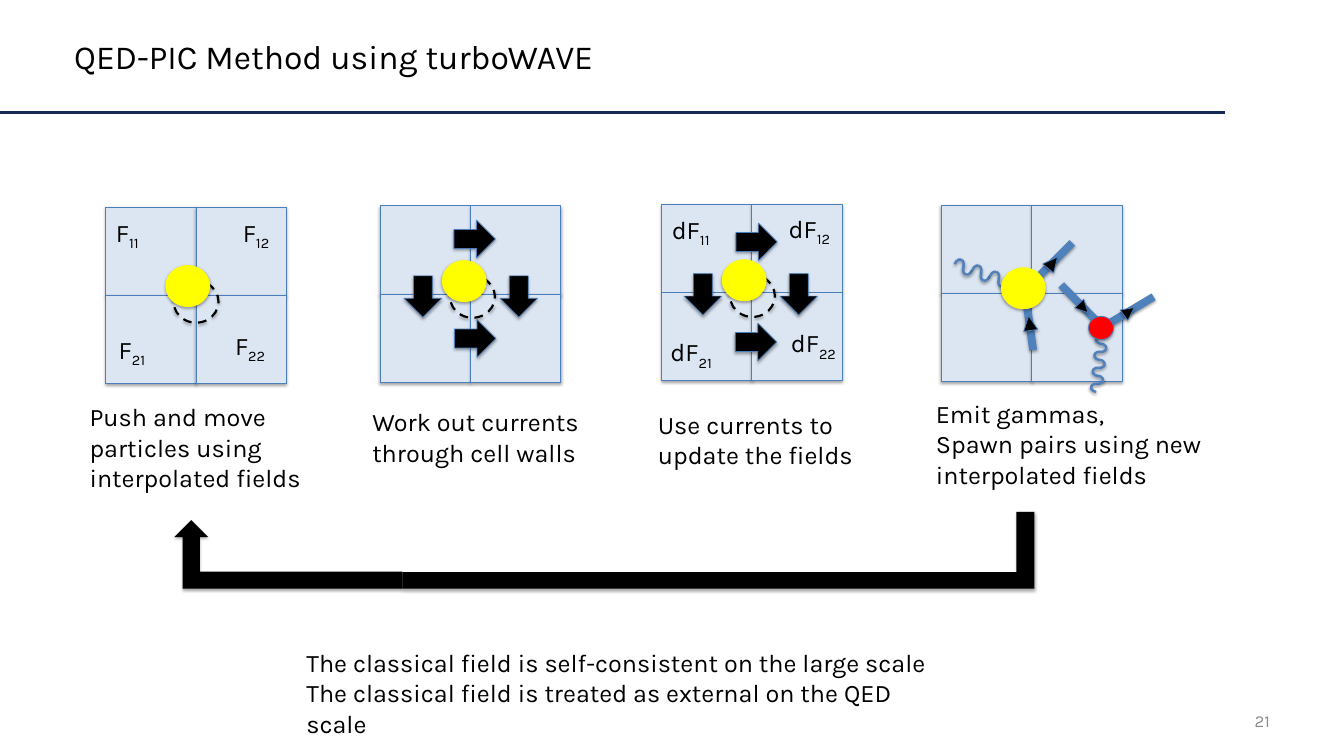
"""Build the slide on the QED-PIC method: four grid steps, a loop arrow and notes."""
import pptx
import pptx.util
import pptx.dml.color
import pptx.enum.dml
import pptx.enum.shapes
import pptx.enum.text
import pptx.oxml.ns
from lxml import etree

Cm, Pt = pptx.util.Cm, pptx.util.Pt
RGB = pptx.dml.color.RGBColor.from_string
KIND = pptx.enum.shapes.MSO_SHAPE
ANCHOR = pptx.enum.text.MSO_ANCHOR
ALIGN = pptx.enum.text.PP_ALIGN
qn = pptx.oxml.ns.qn

THEME = {
    "font": "Karla", "ink": "000000", "gray": "8C8C8C",
    "title": 34.6, "body": 25.9, "small": 17.3,
    "rule": {"line": "142956", "width": 3},
    "cell": {"fill": "DCE6F2", "line": "4B7EBC", "width": 0.75, "shade": 35},
    "arrow": {"fill": "000000", "line": "4B7EBC", "width": 0.75, "shade": 35},
    "loop": {"fill": "000000", "shade": 35},
    "ghost": {"line": "000000", "width": 2.25, "shade": 35,
              "dash": pptx.enum.dml.MSO_LINE.DASH},
    "ball": {"fill": "FFFF00", "shade": 35},
    "pair": {"fill": "FF0000", "line": "4B7EBC", "width": 0.75, "shade": 35},
    "track": {"line": "4F81BD", "width": 8, "shade": 38},
    "wave": {"line": "4F81BD", "width": 2.5, "shade": 38},
}

deck = pptx.Presentation()
deck.slide_width, deck.slide_height = Cm(48.77), Cm(27.43)
slide = deck.slides.add_slide(deck.slide_layouts[5])
shapes = slide.shapes


def draw(kind, look, box, turn=0, flip=""):
    style = THEME[look]
    edges = [Cm(v) for v in box]
    if kind is None:
        item = shapes.add_connector(pptx.enum.shapes.MSO_CONNECTOR.STRAIGHT, *edges)
    else:
        item = shapes.add_shape(kind, *edges)
        item.rotation = turn
        for axis in flip:
            item.element.spPr.xfrm.set("flip" + axis, "1")
        if "fill" in style:
            item.fill.solid()
            item.fill.fore_color.rgb = RGB(style["fill"])
        else:
            item.fill.background()
    if "line" in style:
        item.line.color.rgb = RGB(style["line"])
        form = {"width": Pt(style["width"]), "dash_style": style.get("dash")}
        for name, value in form.items():
            setattr(item.line, name, value)
    else:
        item.line.fill.background()
    effect = etree.SubElement(item.element.spPr, qn("a:effectLst"))
    if "shade" in style:
        shade = etree.SubElement(effect, qn("a:outerShdw"), blurRad=str(Pt(3.1)),
                                 dist=str(Pt(1.8)), dir="5400000", rotWithShape="0")
        tint = etree.SubElement(shade, qn("a:srgbClr"), val=THEME["ink"])
        etree.SubElement(tint, qn("a:alpha"), val=str(style["shade"] * 1000))
    return item


def write(item, lines, size="body", color="ink", align=ALIGN.LEFT, **form):
    frame = item.text_frame
    form = {"word_wrap": True, "auto_size": pptx.enum.text.MSO_AUTO_SIZE.NONE, **form}
    for name, value in form.items():
        setattr(frame, name, value)
    for row, line in enumerate(lines):
        para = frame.add_paragraph() if row else frame.paragraphs[0]
        para.alignment = align
        base, _, sub = line.partition("_")
        for text, drop in ((base, "0"), (sub, "-25000")):
            if text:
                run = para.add_run()
                run.text = text
                font = {"name": THEME["font"], "size": Pt(THEME[size]), "bold": False}
                for name, value in font.items():
                    setattr(run.font, name, value)
                run.font.color.rgb = RGB(THEME[color])
                if drop != "0":
                    run.font._element.set("baseline", drop)


draw(None, "rule", (0, 4.09, 44.45, 4.09))
title = shapes.title
place = {"left": 2.44, "top": 0.25, "width": 42.01, "height": 3.56}
for name, value in place.items():
    setattr(title, name, Cm(value))
write(title, ["QED-PIC Method using turboWAVE"], "title", vertical_anchor=ANCHOR.MIDDLE)
page = shapes.add_textbox(Cm(38.71), Cm(25.43), Cm(7.62), Cm(1.47))
write(page, ["21"], "small", "gray", ALIGN.RIGHT, vertical_anchor=ANCHOR.MIDDLE)

for left, top in ((3.84, 7.52), (13.79, 7.47), (24, 7.42), (34.16, 7.44)):
    for row in range(2):
        for col in range(2):
            draw(KIND.RECTANGLE, "cell", (left + 3.28 * col, top + 3.2 * row, 3.28, 3.2))

labels = [
    ("F_11", 3.96, 7.75), ("F_12", 8.56, 7.75), ("F_21", 4.06, 12.01), ("F_22", 8.28, 11.86),
    ("dF_11", 24.13, 7.65), ("dF_12", 28.37, 7.62), ("dF_21", 24.08, 12.09), ("dF_22", 28.45, 11.76),
]
for text, left, top in labels:
    width = 2.18 if text.startswith("d") else 1.65
    write(shapes.add_textbox(Cm(left), Cm(top), Cm(width), Cm(1.37)), [text], word_wrap=False)

notes = [
    (["Push and move particles using interpolated fields"], 3, 14.45, 8.79, 3.58),
    (["Work out currents through cell walls"], 13.26, 14.63, 8.79, 2.46),
    (["Use currents to update the fields"], 23.62, 14.73, 8.79, 2.46),
    (["Emit gammas,", "Spawn pairs using new interpolated fields"], 33.71, 14.33, 10.52, 3.58),
    (["The classical field is self-consistent on the large scale",
      "The classical field is treated as external on the QED scale"], 10.87, 23.37, 23.8, 3.58),
]
for lines, *box in notes:
    write(shapes.add_textbox(*[Cm(v) for v in box]), lines)

flows = [
    (14.66, 10.01, 0), (18.14, 10.01, 0), (16.54, 7.92, 270), (16.56, 11.53, 270),
    (24.82, 9.93, 0), (28.3, 9.93, 0), (26.77, 8.03, 270), (26.75, 11.66, 270),
]
for left, top, turn in flows:
    draw(KIND.DOWN_ARROW, "arrow", (left, top, 1.37, 1.5), turn)

tracks = [
    (37.19, 10.54, 38.91, 8.81), (37.49, 12.7, 37.19, 10.54),
    (40.03, 11.86, 41.86, 10.77), (38.51, 10.34, 40, 11.86),
]
for ends in tracks:
    draw(None, "track", ends)

waves = [(34.57, 9.47, 0.32, 0.11, 0.46, 0.33, 289.4), (39.8, 11.89, -0.03, 0.29, 0.41, 0.3, 5.8)]
for left, top, across, down, width, height, turn in waves:
    for step in range(8):
        side = "H" if step % 2 else ""
        for half in ("", "V"):
            box = (left + across * step, top + down * step, width, height)
            draw(KIND.ARC, "wave", box, turn, side + half)

heads = [
    (37.11, 11.46, 0.51, 0.53, 351.9), (37.95, 9.27, 0.51, 0.53, 39.6),
    (39.09, 10.95, 0.46, 0.46, 136.1), (40.74, 11.07, 0.46, 0.46, 53.4),
]
for *box, turn in heads:
    draw(KIND.ISOSCELES_TRIANGLE, "arrow", box, turn)

draw(KIND.BENT_UP_ARROW, "loop", (6.32, 18.87, 8.28, 2.49), flip="H")
corner = draw(KIND.RECTANGLE, "loop", (14.6, 18.57, 22.94, 2.79), flip="H")
shell = corner.element.spPr.find(qn("a:prstGeom"))
shell.set("prst", "corner")
for name, value in {"adj1": 21600, "adj2": 23600}.items():
    etree.SubElement(shell.find(qn("a:avLst")), qn("a:gd"), name=name, fmla=f"val {value}")

for left, top in ((6.3, 10.19), (16.33, 10.01), (26.49, 9.98)):
    draw(KIND.OVAL, "ghost", (left, top, 1.63, 1.52))
    draw(KIND.OVAL, "ball", (left - 0.3, top - 0.57, 1.63, 1.52))
draw(KIND.OVAL, "ball", (36.32, 9.7, 1.63, 1.52))
draw(KIND.OVAL, "pair", (39.5, 11.48, 0.91, 0.84))

deck.save("out.pptx")
